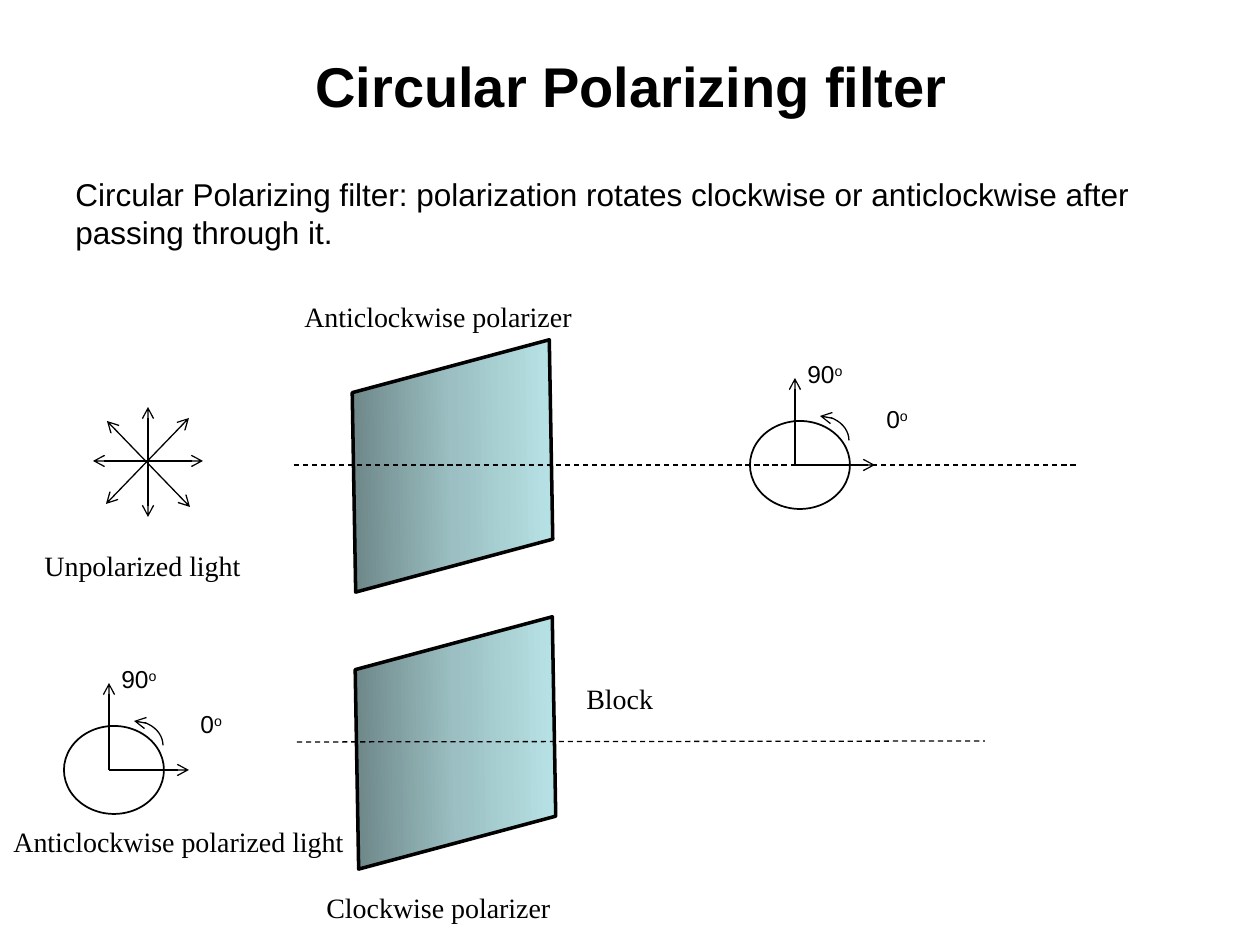
from copy import deepcopy

from pptx import Presentation
from pptx.dml.color import RGBColor
from pptx.enum.dml import MSO_LINE
from pptx.enum.shapes import MSO_CONNECTOR, MSO_SHAPE
from pptx.enum.text import MSO_AUTO_SIZE, PP_ALIGN
from pptx.oxml.ns import qn
from pptx.util import Pt

PX = 914400 // 126
STRAIGHT = MSO_CONNECTOR.STRAIGHT
ELLIPSE, ARC = MSO_SHAPE.OVAL, MSO_SHAPE.ARC
PARALLELOGRAM = MSO_SHAPE.PARALLELOGRAM
DASH = MSO_LINE.DASH
CENTER = PP_ALIGN.CENTER
FIT_SHAPE = MSO_AUTO_SIZE.SHAPE_TO_FIT_TEXT

BLACK = "000000"
GLASS = [(0, "6D8688"), (0.5, "9BBFC2"), (1, "B8E3E6")]

TITLE = ("Circular Polarizing filter", (300, 45, 663, 81))
DEFINITION = (
    "Circular Polarizing filter: polarization rotates clockwise or "
    "anticlockwise after passing through it.",
    (63, 169, 1091, 89),
)
LABELS = [
    ("Unpolarized light", (32, 542, 224, 47)),
    ("Anticlockwise polarized light", (1, 818, 360, 47)),
    ("Anticlockwise polarizer", (292, 293, 304, 47)),
    ("Clockwise polarizer", (314, 884, 260, 47)),
    ("Block", (574, 675, 93, 47)),
]
FILTERS = [(328, 367), (331, 644)]
FILTER_SIZE = (249, 198)
BEAMS = [((294, 465), (1076, 465)), ((297, 742), (985, 741))]
UNPOLARIZED_RAYS = [
    ((148, 407), (148, 517)),
    ((93, 461), (203, 461)),
    ((189, 418), (106, 504)),
    ((107, 421), (190, 507)),
]
ROTATION_ORIGINS = [(795, 465), (109, 770)]
# Offsets from the origin of a rotation diagram
AXIS_TIPS = [(0, -87), (80, 0)]
ANGLES = [("90", (0, -112, 62, 43)), ("0", (79, -67, 49, 43))]
ROTATION_ARC = (-4, -49, 58, 49)
CIRCLE = (-45, -44, 100, 88)

TITLE_FONT = {"name": "Arial", "size": Pt(32), "bold": True}
BODY_FONT = {"name": "Arial", "size": Pt(18)}
ANGLE_FONT = {"name": "Arial", "size": Pt(14)}
LABEL_FONT = {"name": "Times New Roman", "size": Pt(16)}


def rgb(hex_colour):
    return RGBColor.from_string(hex_colour)


def emu(lengths):
    return [length * PX for length in lengths]


def shifted(box, origin):
    return (box[0] + origin[0], box[1] + origin[1], *box[2:])


def add_run(paragraph, words, font_format):
    run = paragraph.add_run()
    run.text = words
    run.font.color.rgb = rgb(BLACK)
    for attribute, value in font_format.items():
        setattr(run.font, attribute, value)
    return run


def add_text(slide, words, box, font_format, wrap=False):
    text_box = slide.shapes.add_textbox(*emu(box))
    text_box.text_frame.word_wrap = wrap
    text_box.text_frame.auto_size = FIT_SHAPE
    paragraph = text_box.text_frame.paragraphs[0]
    add_run(paragraph, words, font_format)
    return paragraph


def set_line(shape, width, arrow_ends=()):
    """Draw a black line; arrow_ends names headEnd and tailEnd, in that order."""
    shape.line.color.rgb = rgb(BLACK)
    shape.line.width = Pt(width)
    line = shape.line._get_or_add_ln()
    for end in arrow_ends:
        arrowhead = line.makeelement(qn(f"a:{end}"), {"type": "arrow"})
        line.append(arrowhead)


def add_line(slide, start, end, arrow_ends=()):
    line = slide.shapes.add_connector(STRAIGHT, *emu(start), *emu(end))
    set_line(line, 0.75, arrow_ends)
    properties = line._element.spPr
    properties.append(properties.makeelement(qn("a:effectLst"), {}))
    return line


def add_outline(slide, preset, box, width, arrow_ends=()):
    outline = slide.shapes.add_shape(preset, *emu(box))
    outline.shadow.inherit = False
    outline.fill.background()
    set_line(outline, width, arrow_ends)
    return outline


def add_filter(slide, corner):
    """Add a glass sheet standing upright, tilted by one degree."""
    sheet = add_outline(slide, PARALLELOGRAM, (*corner, *FILTER_SIZE), 2)
    sheet.rotation = 269
    properties = sheet._element.spPr
    properties.xfrm.set("flipH", "1")
    sheet.fill.gradient()
    sheet.fill.gradient_angle = 270
    stop_list = properties.find(f".//{qn('a:gsLst')}")
    stop_list.append(deepcopy(stop_list[0]))
    for stop, (position, colour) in zip(sheet.fill.gradient_stops, GLASS):
        stop.position = position
        stop.color.rgb = rgb(colour)


def add_rotation(slide, origin):
    """Add a circle with its two axes, their angles and the sense of rotation."""
    for tip in AXIS_TIPS:
        add_line(slide, origin, shifted(tip, origin), ["tailEnd"])
    for number, box in ANGLES:
        paragraph = add_text(slide, number, shifted(box, origin), ANGLE_FONT)
        degree = add_run(paragraph, "o", ANGLE_FONT)
        degree.font._element.set("baseline", "30000")
    add_outline(slide, ARC, shifted(ROTATION_ARC, origin), 0.75, ["headEnd"])
    add_outline(slide, ELLIPSE, shifted(CIRCLE, origin), 1)


def main():
    presentation = Presentation()
    presentation.slide_width, presentation.slide_height = emu((1260, 945))
    slide = presentation.slides.add_slide(presentation.slide_layouts[6])

    add_text(slide, *TITLE, TITLE_FONT).alignment = CENTER
    add_text(slide, *DEFINITION, BODY_FONT, wrap=True)
    for corner in FILTERS:
        add_filter(slide, corner)
    for start, end in BEAMS:
        add_line(slide, start, end).line.dash_style = DASH
    for start, end in UNPOLARIZED_RAYS:
        add_line(slide, start, end, ["headEnd", "tailEnd"])
    for origin in ROTATION_ORIGINS:
        add_rotation(slide, origin)
    for words, box in LABELS:
        add_text(slide, words, box, LABEL_FONT)

    presentation.save("out.pptx")


if __name__ == "__main__":
    main()
